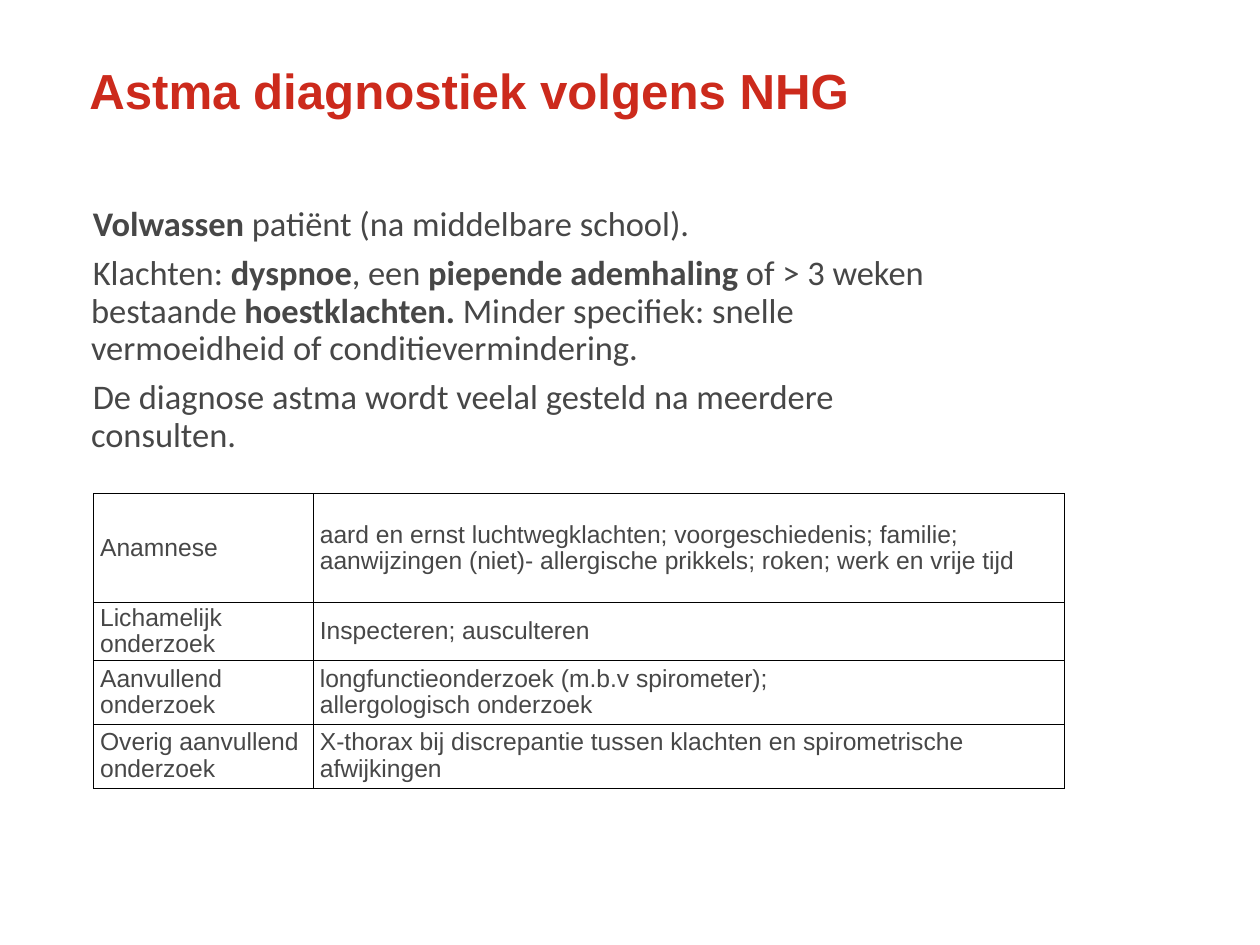
from lxml.etree import SubElement
from pptx import Presentation
from pptx.dml.color import RGBColor
from pptx.enum.text import MSO_ANCHOR
from pptx.oxml.ns import qn
from pptx.util import Pt

PX = 9144  # EMU per px, 100 px to the inch
COLORS = {"title": "CC2A1C", "text": "474747", "line": "000000"}


def write(para, text, size=20, font="Arial", color="text", bold=False, space=1):
    """Fill a paragraph; parts between asterisks are bold."""
    para.line_spacing = space
    for i, part in enumerate(text.split("*")):
        for j, line in enumerate(part.split("\n")):
            if j:
                para.add_line_break()
            if line:
                run = para.add_run()
                run.text = line
                run.font.size = Pt(size)
                run.font.name = font
                run.font.bold = bold or i % 2 == 1
                run.font.color.rgb = RGBColor.from_string(COLORS[color])


def add_box(left, top, width, height):
    box = slide.shapes.add_textbox(left * PX, top * PX, width * PX, height * PX)
    frame = box.text_frame
    frame.word_wrap = True
    frame.margin_left = frame.margin_right = 10 * PX
    frame.margin_top = frame.margin_bottom = 5 * PX
    return frame


deck = Presentation()
deck.slide_width, deck.slide_height = 1422 * PX, 1066 * PX
slide = deck.slides.add_slide(deck.slide_layouts[6])

# Title
title = add_box(91, 63, 1227, 146)
write(title.paragraphs[0], "Astma diagnostiek volgens NHG", size=40, color="title", bold=True)

# Body text
points = [
    "*Volwassen* patiënt (na middelbare school).",
    "Klachten: *dyspnoe*, een *piepende ademhaling* of > 3 weken bestaande "
    "*hoestklachten. *Minder specifiek: snelle vermoeidheid of conditievermindering.",
    "De diagnose astma wordt veelal gesteld na meerdere consulten.",
]
body = add_box(68, 228, 1013, 205)
for i, point in enumerate(points):
    para = body.add_paragraph() if i else body.paragraphs[0]
    props = para._p.get_or_add_pPr()
    props.set("marL", str(25 * PX))
    props.set("indent", str(2 * PX))
    if i:
        para.space_before = Pt(10)
    write(para, point, size=28, font="Calibri", space=0.9)

# Table of examinations
rows = [
    (123, "Anamnese",
     "aard en ernst luchtwegklachten; voorgeschiedenis; familie; "
     "aanwijzingen (niet)- allergische prikkels; roken; werk en vrije tijd"),
    (65, "Lichamelijk onderzoek", "Inspecteren; ausculteren"),
    (72, "Aanvullend onderzoek",
     "longfunctieonderzoek (m.b.v spirometer); \nallergologisch onderzoek"),
    (72, "Overig aanvullend onderzoek",
     "X-thorax bij discrepantie tussen klachten en spirometrische afwijkingen"),
]
widths = [248, 847]
high = sum(row[0] for row in rows)
table = slide.shapes.add_table(
    len(rows), 2, 106 * PX, 557 * PX, sum(widths) * PX, high * PX).table
table.first_row = table.horz_banding = False
for col, width in zip(table.columns, widths):
    col.width = width * PX

for r, (height, *texts) in enumerate(rows):
    table.rows[r].height = height * PX
    for c, text in enumerate(texts):
        cell = table.cell(r, c)
        cell.vertical_anchor = MSO_ANCHOR.MIDDLE
        cell.margin_left = cell.margin_right = 7 * PX
        cell.margin_top = cell.margin_bottom = 0
        write(cell.text_frame.paragraphs[0], text, space=0.95)
        # Borders come before the fill
        props = cell._tc.get_or_add_tcPr()
        for side in ("lnL", "lnR", "lnT", "lnB"):
            line = SubElement(props, qn("a:" + side), w=str(Pt(1)))
            fill = SubElement(line, qn("a:solidFill"))
            SubElement(fill, qn("a:srgbClr"), val=COLORS["line"])
        cell.fill.background()

deck.save("out.pptx")
